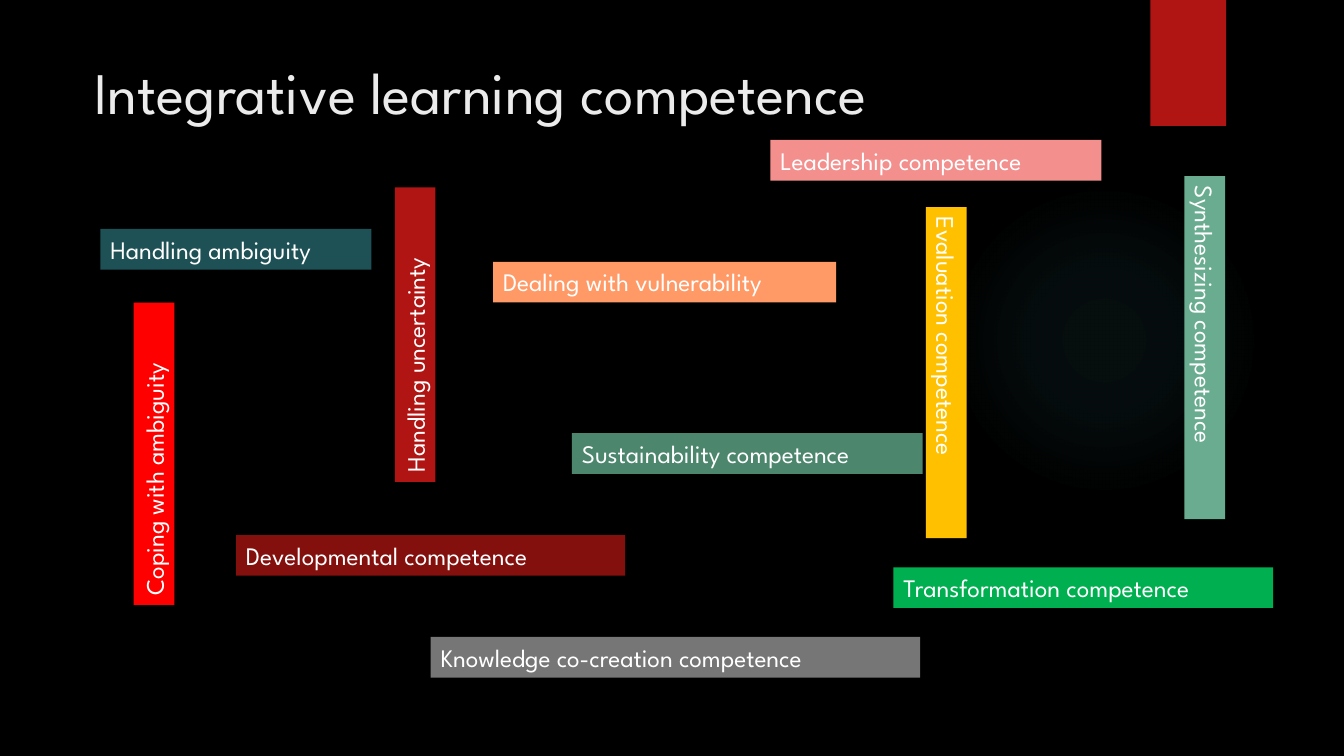
from dataclasses import dataclass

from lxml import etree
from pptx import Presentation
from pptx.dml.color import RGBColor
from pptx.enum.shapes import MSO_SHAPE
from pptx.enum.text import MSO_ANCHOR, MSO_AUTO_SIZE, PP_ALIGN
from pptx.oxml.ns import qn
from pptx.util import Pt

RECTANGLE, OVAL = MSO_SHAPE.RECTANGLE, MSO_SHAPE.OVAL
TOP, LEFT = MSO_ANCHOR.TOP, PP_ALIGN.LEFT
GROW, FIXED = MSO_AUTO_SIZE.SHAPE_TO_FIT_TEXT, MSO_AUTO_SIZE.NONE


@dataclass(frozen=True)
class Theme:
    font: str = "League Spartan"
    title_size: int = 42
    label_size: int = 18
    background: str = "000000"
    title: str = "EBEBEB"
    label: str = "FFFFFF"
    glow: str = "50B9C1"
    dark_red: str = "B01513"
    red: str = "FF0000"
    petrol: str = "1E5155"
    orange: str = "FF9966"
    maroon: str = "84100E"
    grey: str = "767676"
    pink: str = "F38F8D"
    amber: str = "FFC000"
    mint: str = "6AAC90"
    sage: str = "4B866D"
    green: str = "00B050"


theme = Theme()


def add_plain_shape(kind, left, top, width, height, color):
    shape = slide.shapes.add_shape(kind, Pt(left), Pt(top), Pt(width), Pt(height))
    shape.shadow.inherit = False
    shape.fill.solid()
    shape.fill.fore_color.rgb = RGBColor.from_string(color)
    shape.line.fill.background()
    return shape


def set_text(frame, text, size, color, auto_size):
    frame.text = text
    frame.word_wrap = True
    frame.auto_size = auto_size
    frame.vertical_anchor = TOP
    paragraph = frame.paragraphs[0]
    paragraph.alignment = LEFT
    paragraph.font.name = theme.font
    paragraph.font.size = Pt(size)
    paragraph.font.color.rgb = RGBColor.from_string(color)


prs = Presentation()
prs.slide_width, prs.slide_height = Pt(960), Pt(540)
slide = prs.slides.add_slide(prs.slide_layouts[5])
slide.background.fill.solid()
slide.background.fill.fore_color.rgb = RGBColor.from_string(theme.background)

# Soft round glow, fading outwards
glow = add_plain_shape(OVAL, 677.5, 131.8, 222, 222, theme.glow)
solid = glow._element.spPr.find(qn("a:solidFill"))
gradient = etree.Element(qn("a:gradFill"))
stops = etree.SubElement(gradient, qn("a:gsLst"))
for position, opacity in ((0, 7), (36, 6), (69, 0)):
    stop = etree.SubElement(stops, qn("a:gs"), pos=str(position * 1000))
    tint = etree.SubElement(stop, qn("a:srgbClr"), val=theme.glow)
    etree.SubElement(tint, qn("a:alpha"), val=str(opacity * 1000))
circle = etree.SubElement(gradient, qn("a:path"), path="circle")
etree.SubElement(circle, qn("a:fillToRect"), l="50000", t="50000", r="50000", b="50000")
solid.getparent().replace(solid, gradient)

ribbon = add_plain_shape(RECTANGLE, 821.8, 0, 54, 90, theme.dark_red)

title = slide.shapes.title
title.left, title.top, title.width, title.height = Pt(51), Pt(36), Pt(741), Pt(110)
set_text(title.text_frame, "Integrative learning competence",
         theme.title_size, theme.title, FIXED)
title.text_frame.margin_left = Pt(16.5)

# Label, left, top, length, rotation, colour
BAR_HEIGHT = 29.08
competences = (
    ("Handling uncertainty", 191.4, 224.5, 210.4, 270, theme.dark_red),
    ("Coping with ambiguity", 2.1, 309.6, 216, 270, theme.red),
    ("Handling ambiguity", 71.8, 163.6, 193.5, 0, theme.petrol),
    ("Dealing with vulnerability", 352.2, 187, 245, 0, theme.orange),
    ("Developmental competence", 168.6, 382.2, 278, 0, theme.maroon),
    ("Knowledge co-creation competence", 307.6, 455, 349.7, 0, theme.grey),
    ("Leadership competence", 550.3, 100, 236.4, 0, theme.pink),
    ("Evaluation competence", 557.7, 251.6, 236.4, 90, theme.amber),
    ("Synthesizing competence", 738, 233.7, 245, 90, theme.mint),
    ("Sustainability competence", 408.5, 309.4, 250.6, 0, theme.sage),
    ("Transformation competence", 638.1, 405.2, 271.3, 0, theme.green),
)
for label, left, top, length, rotation, color in competences:
    bar = add_plain_shape(RECTANGLE, left, top, length, BAR_HEIGHT, color)
    bar.rotation = rotation
    set_text(bar.text_frame, label, theme.label_size, theme.label, GROW)

prs.save("out.pptx")
